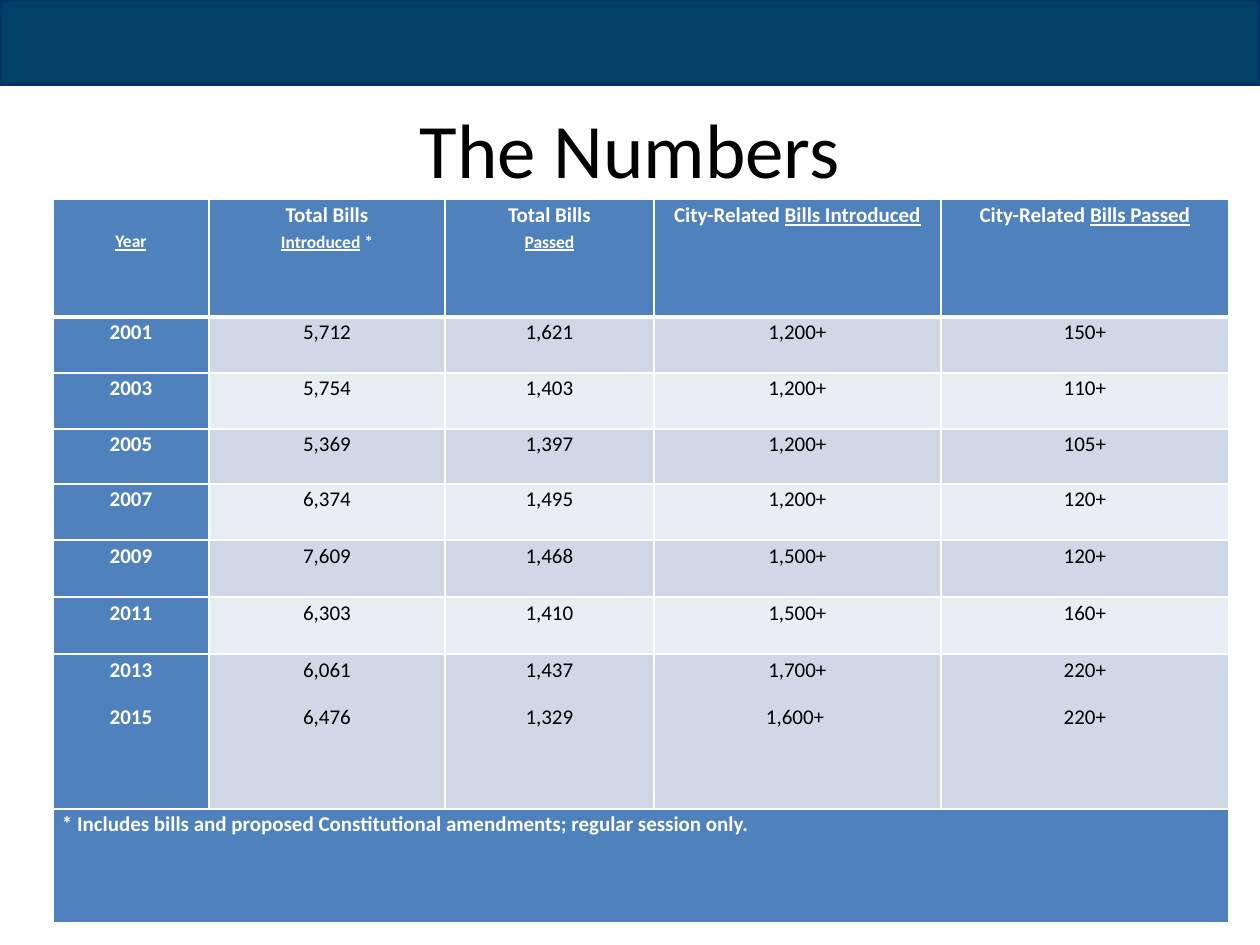
import pptx
import pptx.util
from lxml import etree
from pptx.dml.color import RGBColor
from pptx.enum.shapes import MSO_SHAPE
from pptx.enum.text import MSO_ANCHOR, PP_ALIGN
from pptx.oxml.ns import qn

PX = 914400 // 126
FONT = "Calibri"
COLORS = {"bar": "003F66", "bar_line": "003366", "head": "4F81BD", "odd": "D0D8E8",
          "even": "E9EDF4", "white": "FFFFFF", "black": "000000"}

TITLE = "The Numbers"
# Each header is a list of lines: (size in points, [(text, underlined), ...])
HEADERS = [
    [(10, [("Year", True)])],
    [(12, [("Total Bills", False)]), (10, [("Introduced", True), (" *", False)])],
    [(12, [("Total Bills", False)]), (10, [("Passed", True)])],
    [(12, [("City-Related ", False), ("Bills Introduced", True)])],
    [(12, [("City-Related ", False), ("Bills Passed", True)])],
]
# The last row holds two years, one paragraph each
ROWS = [
    ["2001", "5,712", "1,621", "1,200+", "150+"],
    ["2003", "5,754", "1,403", "1,200+", "110+"],
    ["2005", "5,369", "1,397", "1,200+", "105+"],
    ["2007", "6,374", "1,495", "1,200+", "120+"],
    ["2009", "7,609", "1,468", "1,500+", "120+"],
    ["2011", "6,303", "1,410", "1,500+", "160+"],
    ["2013\n2015", "6,061\n6,476", "1,437\n1,329", "1,700+\n1,600+ ", "220+\n220+"],
]
FOOTNOTE = "* Includes bills and proposed Constitutional amendments; regular session only."
COL_WIDTHS = [156, 236, 209, 287, 288]
ROW_HEIGHTS = [118, 56, 56, 55, 56, 57, 57, 155, 114]
EXACT_ROWS = 4  # years set with exact line spacing


def px(n):
    return pptx.util.Emu(n * PX)


def rgb(name):
    return RGBColor.from_string(COLORS[name])


def style_paragraph(p, size=12, color="white", bold=True, spacing=1.15, after=10,
                    align=PP_ALIGN.CENTER):
    p.alignment = align
    p.line_spacing = spacing
    p.space_after = pptx.util.Pt(after)
    p.font.name = FONT
    p.font.size = pptx.util.Pt(size)
    p.font.bold = bold
    p.font.color.rgb = rgb(color)


def style_cell(cell, fill, top=1, bottom=1):
    """Set margins, fill and white borders; top and bottom are widths in points."""
    cell.margin_left = cell.margin_right = px(9)
    cell.margin_top = cell.margin_bottom = 0
    cell.fill.solid()
    cell.fill.fore_color.rgb = rgb(fill)
    tc_pr = cell._tc.get_or_add_tcPr()
    for i, (side, width) in enumerate([("L", 1), ("R", 1), ("T", top), ("B", bottom)]):
        ln = etree.Element(qn(f"a:ln{side}"), w=str(pptx.util.Pt(width)))
        solid = etree.SubElement(ln, qn("a:solidFill"))
        etree.SubElement(solid, qn("a:srgbClr"), val=COLORS["white"])
        tc_pr.insert(i, ln)


def paragraphs(tf, count):
    return [tf.paragraphs[0]] + [tf.add_paragraph() for _ in range(count - 1)]


def add_title(s):
    title = s.shapes.title
    title.left, title.top, title.width, title.height = px(63), px(21), px(1134), px(173)
    tf = title.text_frame
    tf.text = TITLE
    tf.vertical_anchor = MSO_ANCHOR.BOTTOM
    tf.margin_bottom = 0
    p = tf.paragraphs[0]
    p.alignment = PP_ALIGN.CENTER
    p.font.name = FONT
    p.font.size = pptx.util.Pt(44)
    p.font.color.rgb = rgb("black")


def add_bar(s):
    bar = s.shapes.add_shape(MSO_SHAPE.RECTANGLE, 0, 0, px(1260), px(84))
    bar.shadow.inherit = False
    bar.fill.solid()
    bar.fill.fore_color.rgb = rgb("bar")
    bar.line.color.rgb = rgb("bar_line")
    bar.line.width = pptx.util.Pt(2)
    s.shapes._spTree.insert(2, bar._element)  # behind the title


def add_bills_table(s):
    table = s.shapes.add_table(len(ROW_HEIGHTS), len(COL_WIDTHS), px(53), px(199),
                               px(sum(COL_WIDTHS)), px(sum(ROW_HEIGHTS))).table
    for column, width in zip(table.columns, COL_WIDTHS):
        column.width = px(width)
    for row, height in zip(table.rows, ROW_HEIGHTS):
        row.height = px(height)

    for c, lines in enumerate(HEADERS):
        cell = table.cell(0, c)
        style_cell(cell, "head", bottom=3)
        for p, (size, runs) in zip(paragraphs(cell.text_frame, len(lines)), lines):
            style_paragraph(p, size, after=0)
            for text, underlined in runs:
                r = p.add_run()
                r.text = text
                r.font.underline = underlined
    table.cell(0, 0).margin_top = px(29)  # level with the second header line

    for i, values in enumerate(ROWS):
        spacing = pptx.util.Pt(16) if i < EXACT_ROWS else 1.15
        for c, value in enumerate(values):
            is_year = c == 0
            cell = table.cell(i + 1, c)
            style_cell(cell, "head" if is_year else ("odd", "even")[i % 2],
                       top=3 if i == 0 else 1)
            lines = value.split("\n")
            for p, line in zip(paragraphs(cell.text_frame, len(lines)), lines):
                p.text = line
                style_paragraph(p, color="white" if is_year else "black",
                                bold=is_year, spacing=spacing)

    last = len(ROW_HEIGHTS) - 1
    note = table.cell(last, 0)
    note.merge(table.cell(last, len(COL_WIDTHS) - 1))
    style_cell(note, "head")
    p = note.text_frame.paragraphs[0]
    p.text = FOOTNOTE
    style_paragraph(p, spacing=pptx.util.Pt(16), align=PP_ALIGN.LEFT)


def main():
    prs = pptx.Presentation()
    prs.slide_width, prs.slide_height = px(1260), px(945)
    s = prs.slides.add_slide(prs.slide_layouts[5])
    add_title(s)
    add_bar(s)
    add_bills_table(s)
    prs.save("out.pptx")


if __name__ == "__main__":
    main()
